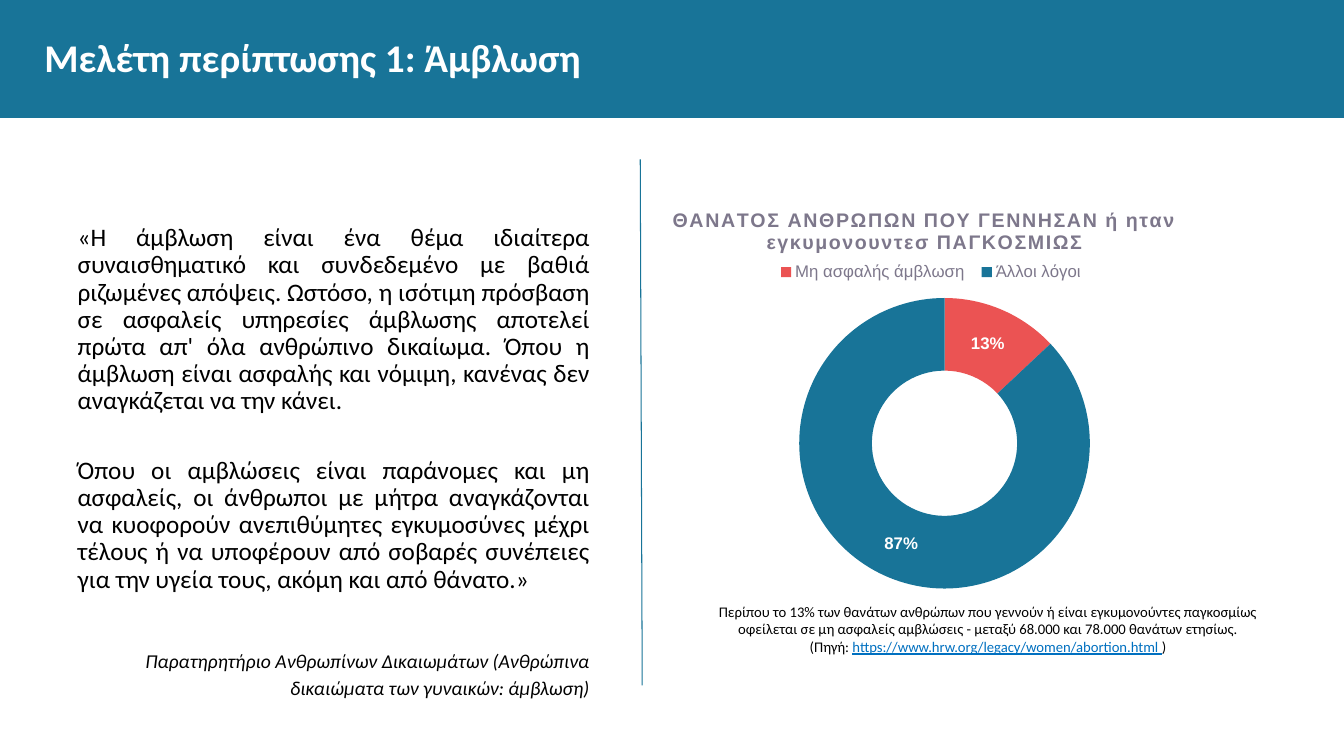
import pptx
import pptx.chart.data
import pptx.dml.color
import pptx.enum.chart
import pptx.enum.shapes
import pptx.enum.text
import pptx.oxml
import pptx.oxml.ns
import pptx.util

Inches = pptx.util.Inches
Pt = pptx.util.Pt
ALIGN = pptx.enum.text.PP_ALIGN
TEAL, RED, GREY = "187498", "EB5353", "7D778B"
BLACK, WHITE, LINK = "000000", "FFFFFF", "0070C0"

QUOTE = [
    "«Η άμβλωση είναι ένα θέμα ιδιαίτερα συναισθηματικό και συνδεδεμένο με βαθιά ριζωμένες "
    "απόψεις. Ωστόσο, η ισότιμη πρόσβαση σε ασφαλείς υπηρεσίες άμβλωσης αποτελεί πρώτα απ' όλα "
    "ανθρώπινο δικαίωμα. Όπου η άμβλωση είναι ασφαλής και νόμιμη, κανένας δεν αναγκάζεται να "
    "την κάνει.",
    "Όπου οι αμβλώσεις είναι παράνομες και μη ασφαλείς, οι άνθρωποι με μήτρα αναγκάζονται να "
    "κυοφορούν ανεπιθύμητες εγκυμοσύνες μέχρι τέλους ή να υποφέρουν από σοβαρές συνέπειες για "
    "την υγεία τους, ακόμη και από θάνατο.»",
]
ATTRIBUTION = "Παρατηρητήριο Ανθρωπίνων Δικαιωμάτων (Ανθρώπινα δικαιώματα των γυναικών: άμβλωση)"
FINDING = (
    "Περίπου το 13% των θανάτων ανθρώπων που γεννούν ή είναι εγκυμονούντες παγκοσμίως "
    "οφείλεται σε μη ασφαλείς αμβλώσεις - μεταξύ 68.000 και 78.000 θανάτων ετησίως."
)


def rgb(color):
    """Turn a hex string into a colour."""
    return pptx.dml.color.RGBColor.from_string(color)


def set_font(font, size, color=BLACK, name="Calibri", bold=False, italic=False, underline=False):
    """Format a font."""
    font.size, font.name = Pt(size), name
    font.bold, font.italic, font.underline = bold, italic, underline
    font.color.rgb = rgb(color)


def write(paragraph, text, **style):
    """Append formatted text to a paragraph."""
    run = paragraph.add_run()
    run.text = text
    set_font(run.font, **style)


def place(shape, left, top, width, height, margins=(0, 0)):
    """Position a text shape and return its cleared frame."""
    shape.left, shape.top, shape.width, shape.height = map(Inches, (left, top, width, height))
    frame = shape.text_frame
    frame.word_wrap = True
    frame.auto_size = pptx.enum.text.MSO_AUTO_SIZE.NONE
    frame.margin_left = frame.margin_right = Inches(margins[0])
    frame.margin_top = frame.margin_bottom = Inches(margins[1])
    return frame


def add_header(slide, left, top, width, height):
    """Draw the banner with the slide title on it."""
    title = slide.shapes.title
    banner = slide.shapes.add_shape(
        pptx.enum.shapes.MSO_SHAPE.RECTANGLE, *map(Inches, (left, top, width, height)))
    banner.shadow.inherit = False
    banner.fill.solid()
    banner.fill.fore_color.rgb = rgb(TEAL)
    banner.line.fill.background()
    title.element.addprevious(banner.element)
    frame = place(title, left + 0.44, top + 0.19, width - 0.87, 0.74)
    frame.vertical_anchor = pptx.enum.text.MSO_ANCHOR.MIDDLE
    frame.paragraphs[0].alignment = ALIGN.LEFT
    write(frame.paragraphs[0], "Μελέτη περίπτωσης 1: Άμβλωση", size=28, color=WHITE, bold=True)


def add_quote(slide, left, top, width, height):
    """Fill the body with the quotation and its attribution."""
    frame = place(slide.placeholders[1], left, top, width, height)
    frame.vertical_anchor = pptx.enum.text.MSO_ANCHOR.TOP
    passages = [(text, ALIGN.JUSTIFY, 0.9, gap, 18, False) for text, gap in zip(QUOTE, (0, 30))]
    passages.append((ATTRIBUTION, ALIGN.RIGHT, 1.15, 37, 14, True))
    for index, (text, alignment, spacing, gap, size, italic) in enumerate(passages):
        paragraph = frame.paragraphs[0] if index == 0 else frame.add_paragraph()
        paragraph.alignment = alignment
        paragraph.line_spacing = spacing
        paragraph.space_before = Pt(gap)
        properties = paragraph._p.get_or_add_pPr()
        properties.set("marL", "0")
        properties.set("indent", "0")
        properties.append(pptx.oxml.parse_xml(f"<a:buNone {pptx.oxml.ns.nsdecls('a')}/>"))
        write(paragraph, text, size=size, italic=italic)


def add_divider(slide, left, top, width, height):
    """Draw the line between the two halves."""
    divider = slide.shapes.add_connector(
        pptx.enum.shapes.MSO_CONNECTOR.STRAIGHT,
        *map(Inches, (left, top, left + width, top + height)))
    divider.line.color.rgb = rgb(TEAL)
    divider.line.width = Pt(0.75)
    divider.element.spPr.append(
        pptx.oxml.parse_xml(f"<a:effectLst {pptx.oxml.ns.nsdecls('a')}/>"))


def set_layout(parent, index, target, **fractions):
    """Fix a chart part at fractions of the chart area."""
    for layout in parent.xpath("c:layout"):
        parent.remove(layout)
    modes = f"{target}<c:xMode val='edge'/><c:yMode val='edge'/>"
    sizes = "".join(f"<c:{key} val='{value}'/>" for key, value in fractions.items())
    parent.insert(index, pptx.oxml.parse_xml(
        f"<c:layout {pptx.oxml.ns.nsdecls('c')}><c:manualLayout>{modes}{sizes}"
        "</c:manualLayout></c:layout>"))


def add_deaths_chart(slide, left, top, width, height):
    """Add the doughnut of causes of death."""
    causes = pptx.chart.data.CategoryChartData()
    causes.categories = ["Μη ασφαλής άμβλωση", "Άλλοι λόγοι"]
    causes.add_series("Series 1", (13, 87))
    chart = slide.shapes.add_chart(
        pptx.enum.chart.XL_CHART_TYPE.DOUGHNUT,
        *map(Inches, (left, top, width, height)), causes).chart
    set_font(chart.font, size=10, color="3B3842", name="Arial")

    chart.has_title = True
    write(chart.chart_title.text_frame.paragraphs[0],
          "ΘΑΝΑΤΟΣ ΑΝΘΡΩΠΩΝ ΠΟΥ ΓΕΝΝΗΣΑΝ ή ηταν εγκυμονουντεσ ΠΑΓΚΟΣΜΙΩΣ",
          size=14, color=GREY, name="Arial", bold=True)
    chart.element.xpath(".//c:title//a:r/a:rPr")[0].set("spc", "100")

    chart.has_legend = True
    chart.legend.position = pptx.enum.chart.XL_LEGEND_POSITION.TOP
    chart.legend.include_in_layout = False
    set_font(chart.legend.font, size=12, color=GREY, name="Arial")
    set_layout(chart.element.xpath(".//c:legend")[0], 1, "", x=0.26, y=0.17, w=0.5, h=0.07)
    set_layout(chart.element.xpath(".//c:plotArea")[0], 0,
               "<c:layoutTarget val='inner'/>", x=0.295, y=0.27, w=0.472, h=0.73)

    plot = chart.plots[0]
    plot.vary_by_categories = True
    for index, color in enumerate((RED, TEAL)):
        fill = plot.series[0].points[index].format.fill
        fill.solid()
        fill.fore_color.rgb = rgb(color)
    plot.has_data_labels = True
    labels = plot.data_labels
    labels.show_percentage, labels.show_value = True, False
    labels.number_format, labels.number_format_is_linked = "0%", False
    set_font(labels.font, size=12, color=WHITE, name="Arial", bold=True)


def add_source_note(slide, left, top, width, height):
    """Write the finding and its source under the chart."""
    note = slide.shapes.add_textbox(0, 0, 0, 0)
    frame = place(note, left, top, width, height, margins=(0.1, 0.05))
    finding, source = frame.paragraphs[0], frame.add_paragraph()
    finding.alignment = source.alignment = ALIGN.CENTER
    write(finding, FINDING, size=10.5)
    write(source, "(Πηγή: ", size=10.5)
    write(source, "https://www.hrw.org/legacy/women/abortion.html ",
          size=10.5, color=LINK, underline=True)
    write(source, ")", size=10.5)


def main():
    """Build and save the slide."""
    deck = pptx.Presentation()
    deck.slide_width, deck.slide_height = Inches(13.33), Inches(7.5)
    slide = deck.slides.add_slide(deck.slide_layouts[1])
    add_header(slide, 0, 0, 13.33, 1.17)
    add_quote(slide, 0.77, 2.23, 5.08, 3.27)
    add_deaths_chart(slide, 5.97, 1.89, 6.4, 3.95)
    add_source_note(slide, 6.86, 5.93, 5.88, 0.87)
    add_divider(slide, 6.35, 1.58, 0.02, 5.22)
    deck.save("out.pptx")


if __name__ == "__main__":
    main()
